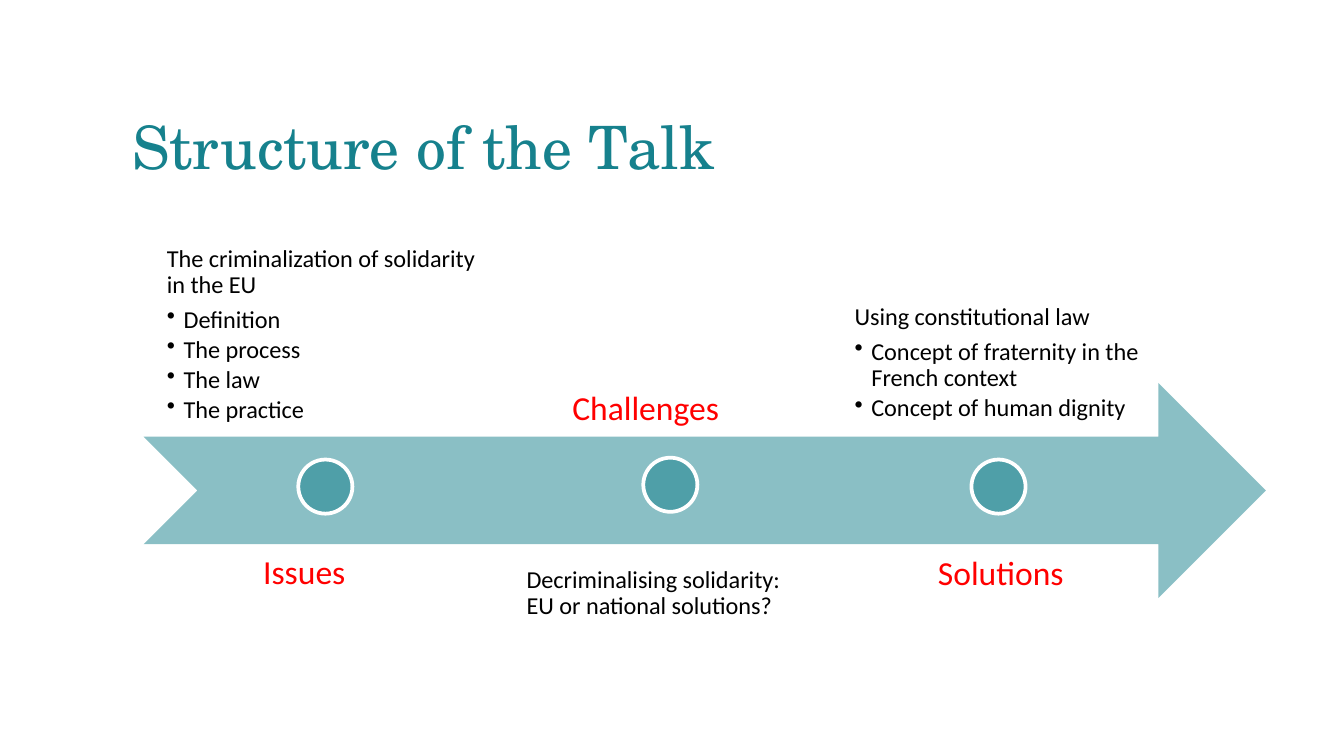
from lxml.etree import SubElement
from pptx import Presentation
from pptx.dml.color import RGBColor
from pptx.enum.shapes import MSO_SHAPE
from pptx.enum.text import MSO_ANCHOR, MSO_AUTO_SIZE
from pptx.oxml.ns import qn
from pptx.util import Pt

TEAL, RED, BLACK, WHITE = "16818D", "FF0000", "000000", "FFFFFF"
SANS, SERIF = "Calibri", "TeX Gyre Schola"


def color(code):
    return RGBColor.from_string(code)


class Page:
    size = 13

    def __init__(self, deck):
        self.slide = deck.slides.add_slide(deck.slide_layouts[6])

    def shape(self, kind, x, y, w, h, edge=None):
        """Add a half-clear teal shape, with a white edge if asked."""
        item = self.slide.shapes.add_shape(kind, Pt(x), Pt(y), Pt(w), Pt(h))
        item.shadow.inherit = False
        item.fill.solid()
        item.fill.fore_color.rgb = color(TEAL)
        tint = item.fill._xPr.find(qn("a:solidFill"))[0]
        SubElement(tint, qn("a:alpha"), val="50000")
        if edge:
            item.line.color.rgb = color(WHITE)
            item.line.width = Pt(edge)
        else:
            item.line.fill.background()

    def frame(self, x, y, w, h, pads):
        """Add an empty text box; pads run left, top, right, bottom."""
        box = self.slide.shapes.add_textbox(Pt(x), Pt(y), Pt(w), Pt(h))
        frame = box.text_frame
        frame.word_wrap = True
        (frame.margin_left, frame.margin_top,
         frame.margin_right, frame.margin_bottom) = map(Pt, pads)
        return frame

    def style(self, para, size, face, code):
        for run in para.runs:
            run.font.size = Pt(size)
            run.font.name = face
            run.font.color.rgb = color(code)

    def title(self, text, x, y, w, h):
        frame = self.frame(x, y, w, h, (0, 0, 0, 0))
        frame.text = text
        para = frame.paragraphs[0]
        para.line_spacing = Pt(42)
        self.style(para, 32, SERIF, TEAL)

    def label(self, text, x, y, w):
        frame = self.frame(x, y, w, 29, (7.2, 3.6, 7.2, 3.6))
        frame.auto_size = MSO_AUTO_SIZE.SHAPE_TO_FIT_TEXT
        frame.text = text
        self.style(frame.paragraphs[0], 18, SANS, RED)

    def notes(self, lines, x, y, w, h, left=7.2, anchor=MSO_ANCHOR.BOTTOM):
        """Add a lead line with bullets below it."""
        frame = self.frame(x, y, w, h, (left, 7.2, 7.2, 7.2))
        frame.vertical_anchor = anchor
        frame.text = "\n".join(lines)
        for rank, para in enumerate(frame.paragraphs):
            if rank:
                self.bullet(para)
            para.line_spacing = 0.9
            para.space_after = Pt(self.size * (0.15 if rank else 0.35))
            self.style(para, self.size, SANS, BLACK)

    def bullet(self, para):
        para.level = 1
        props = para._p.get_or_add_pPr()
        props.set("marL", str(Pt(9)))
        props.set("indent", str(Pt(-9)))
        SubElement(props, qn("a:buChar"), char="•")


def main():
    deck = Presentation()
    deck.slide_width, deck.slide_height = Pt(720), Pt(405)
    page = Page(deck)

    # Arrow and its three stops
    page.shape(MSO_SHAPE.NOTCHED_RIGHT_ARROW, 77, 205.2, 601.2, 115.2)
    for x, y in ((159.8, 246.2), (344.6, 245.2), (520.4, 246.2)):
        page.shape(MSO_SHAPE.OVAL, x, y, 29, 29, edge=2)

    # Notes by each stop
    page.notes(("The criminalization of solidarity in the EU", "Definition",
                "The process", "The law", "The practice"),
               77, 118.8, 190, 115.2, left=12.4)
    page.notes(("Decriminalising solidarity: EU or national solutions?",),
               275, 296.6, 167, 70.6, anchor=MSO_ANCHOR.TOP)
    page.notes(("Using constitutional law",
                "Concept of fraternity in the French context",
                "Concept of human dignity"),
               450.7, 118.1, 167, 115.2)

    # Title and red labels
    page.title("Structure of the Talk", 70.9, 55.4, 525, 38.2)
    page.label("Issues", 133.9, 291.6, 77.8)
    page.label("Challenges", 299.5, 203.8, 113)
    page.label("Solutions", 495.4, 292.3, 100.8)

    deck.save("out.pptx")


if __name__ == "__main__":
    main()
